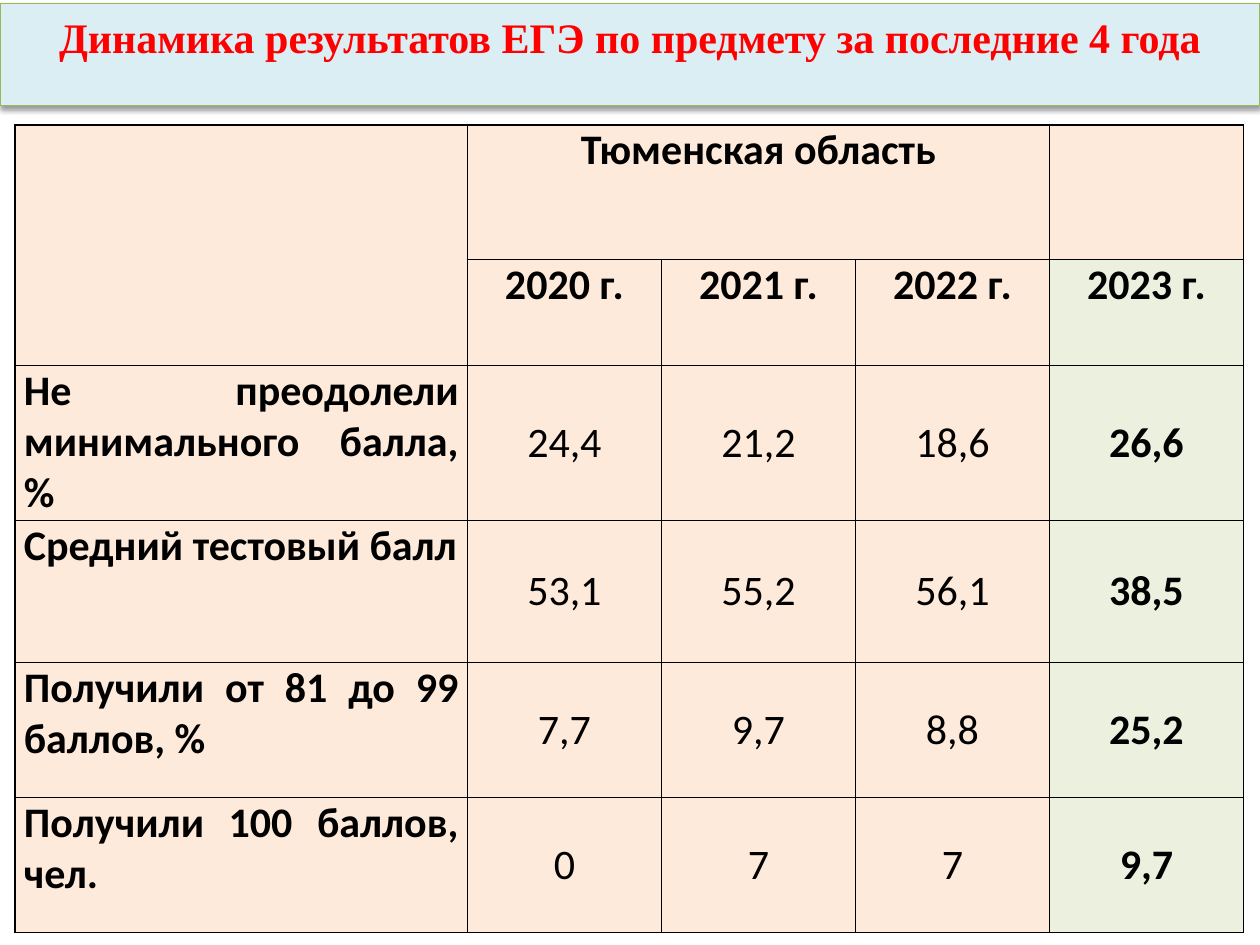
from lxml.etree import SubElement
from pptx import Presentation
from pptx.dml.color import RGBColor
from pptx.enum.text import MSO_ANCHOR, MSO_AUTO_SIZE, PP_ALIGN
from pptx.oxml.ns import qn
from pptx.util import Inches, Pt

BLACK = RGBColor(0x00, 0x00, 0x00)
RED = RGBColor(0xFF, 0x00, 0x00)
PALE_BLUE = RGBColor(0xDB, 0xEE, 0xF4)
GREEN = RGBColor(0x98, 0xB9, 0x55)
PEACH = RGBColor(0xFD, 0xEA, 0xDA)
PALE_GREEN = RGBColor(0xEB, 0xF1, 0xDE)

YEARS = ["2020 г.", "2021 г.", "2022 г.", "2023 г."]
RESULTS = [
    ["Не преодолели минимального балла, %", "24,4", "21,2", "18,6", "26,6"],
    ["Средний тестовый балл", "53,1", "55,2", "56,1", "38,5"],
    ["Получили от 81 до 99 баллов, %", "7,7", "9,7", "8,8", "25,2"],
    ["Получили 100 баллов, чел.", "0", "7", "7", "9,7"],
]
ROWS = [["", "Тюменская область", "", "", ""], ["", *YEARS], *RESULTS]
COL_WIDTHS = [3.59] + [1.54] * 4
ROW_HEIGHTS = [1.07, 0.84, 1.23, 1.13, 1.07, 1.07]
HEADER_ROWS = 2
LAST_COL = len(COL_WIDTHS) - 1


class Deck:
    """Slide size, text style and the current slide."""
    size = Pt(24)
    body_font = "Calibri"
    title_font = "Times New Roman"

    def __init__(self):
        self.prs = Presentation()
        self.prs.slide_width, self.prs.slide_height = Inches(10), Inches(7.5)
        self.s = self.prs.slides.add_slide(self.prs.slide_layouts[5])

    def format_text(self, p, font, color, bold, align):
        p.alignment = align
        p.font.name, p.font.size, p.font.bold = font, self.size, bold
        p.font.color.rgb = color

    def shadow(self, shape):
        effects = SubElement(shape._element.spPr, qn("a:effectLst"))
        outer = SubElement(effects, qn("a:outerShdw"), blurRad=str(Pt(3.1)),
                           dist=str(Pt(1.6)), dir="5400000", rotWithShape="0")
        color = SubElement(outer, qn("a:srgbClr"), val="000000")
        SubElement(color, qn("a:alpha"), val="38000")

    def title(self, text, top, height):
        sp = self.s.shapes.title
        sp.left, sp.top = 0, Inches(top)
        sp.width, sp.height = self.prs.slide_width, Inches(height)
        sp.fill.solid()
        sp.fill.fore_color.rgb = PALE_BLUE
        sp.line.color.rgb, sp.line.width = GREEN, Pt(0.75)
        self.shadow(sp)
        tf = sp.text_frame
        tf.text = text
        tf.auto_size, tf.word_wrap = MSO_AUTO_SIZE.NONE, True
        tf.vertical_anchor, tf.margin_top = MSO_ANCHOR.TOP, Inches(0.06)
        self.format_text(tf.paragraphs[0], self.title_font, RED, True, PP_ALIGN.CENTER)

    def borders(self, cell):
        tc_pr = cell._tc.get_or_add_tcPr()
        for side in ("lnL", "lnR", "lnT", "lnB"):
            ln = SubElement(tc_pr, qn(f"a:{side}"), w=str(Pt(1)))
            fill = SubElement(ln, qn("a:solidFill"))
            SubElement(fill, qn("a:srgbClr"), val=str(BLACK))

    def cell(self, cell, text, row, col):
        is_value = row >= HEADER_ROWS and col > 0
        is_label = row >= HEADER_ROWS and col == 0
        self.borders(cell)
        cell.fill.solid()
        cell.fill.fore_color.rgb = PALE_GREEN if row and col == LAST_COL else PEACH
        cell.margin_left = cell.margin_right = Inches(0.07)
        cell.margin_top = cell.margin_bottom = 0
        cell.vertical_anchor = MSO_ANCHOR.MIDDLE if is_value else MSO_ANCHOR.TOP
        if text:
            cell.text = text
            self.format_text(cell.text_frame.paragraphs[0], self.body_font, BLACK,
                             not is_value or col == LAST_COL,
                             PP_ALIGN.JUSTIFY if is_label else PP_ALIGN.CENTER)

    def table(self, left, top):
        frame = self.s.shapes.add_table(
            len(ROWS), len(COL_WIDTHS), Inches(left), Inches(top),
            Inches(sum(COL_WIDTHS)), Inches(sum(ROW_HEIGHTS)))
        table = frame.table
        table.first_row = table.horz_banding = False
        for column, width in zip(table.columns, COL_WIDTHS):
            column.width = Inches(width)
        for row, height in zip(table.rows, ROW_HEIGHTS):
            row.height = Inches(height)
        for r, texts in enumerate(ROWS):
            for c, text in enumerate(texts):
                self.cell(table.cell(r, c), text, r, c)
        # Corner cell and region heading
        table.cell(0, 0).merge(table.cell(1, 0))
        table.cell(0, 1).merge(table.cell(0, 3))


def main():
    deck = Deck()
    # Title band
    deck.title("Динамика результатов ЕГЭ по предмету за последние 4 года", 0.03, 0.81)
    # Results by year
    deck.table(0.12, 0.99)
    deck.prs.save("out.pptx")


if __name__ == "__main__":
    main()
